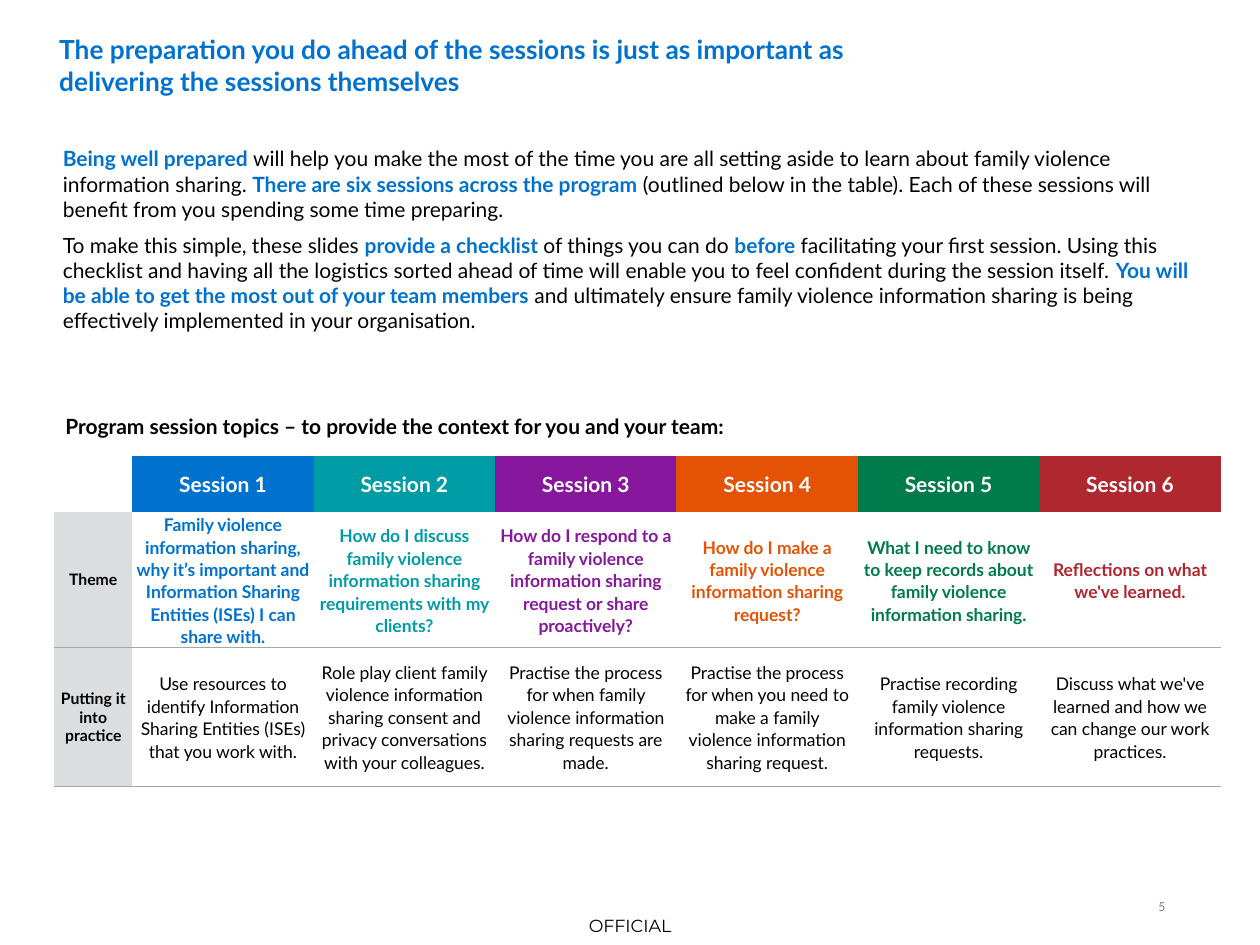
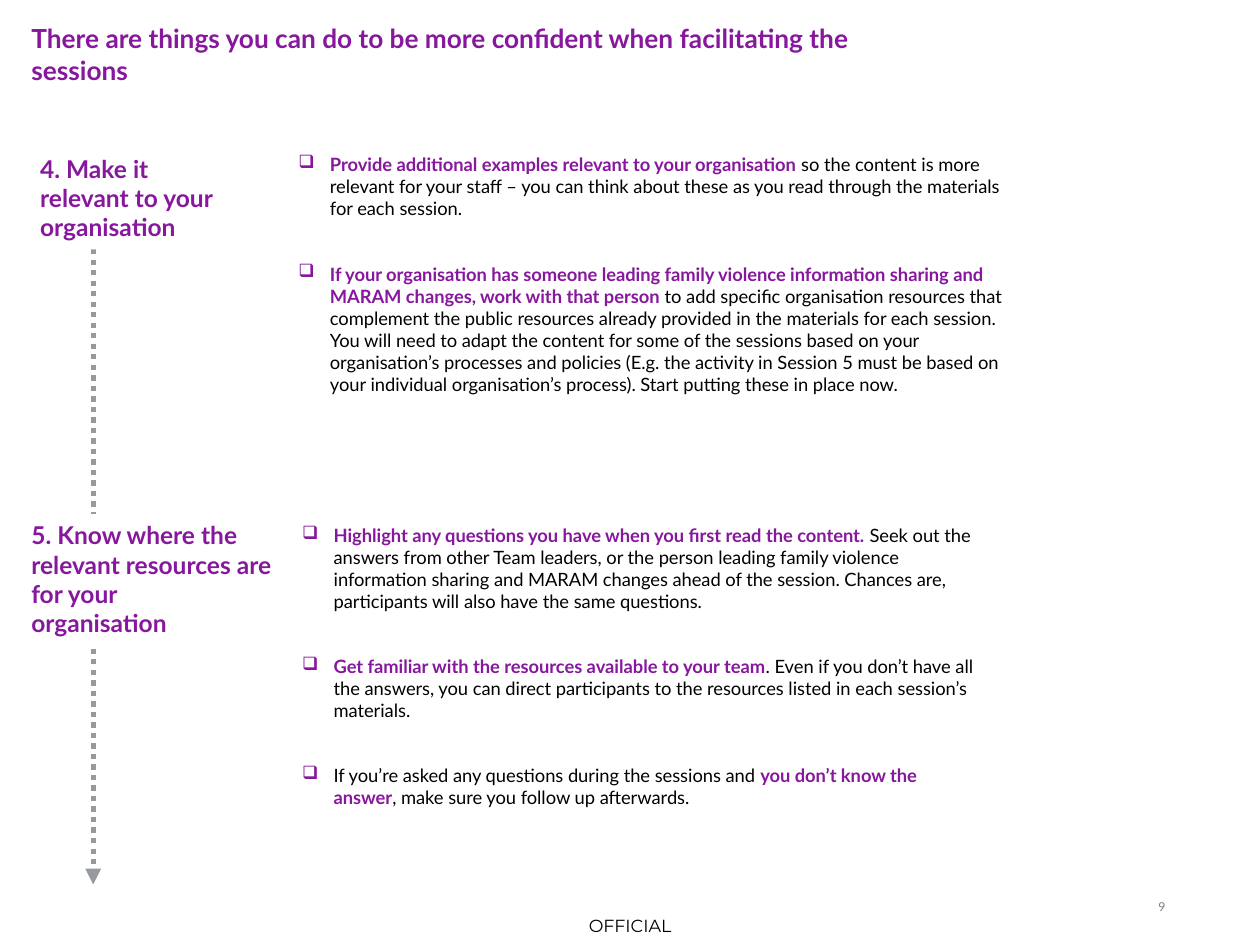
from dataclasses import dataclass

from lxml.etree import SubElement
from pptx import Presentation
from pptx.dml.color import RGBColor
from pptx.enum.dml import MSO_LINE
from pptx.enum.shapes import MSO_CONNECTOR, MSO_SHAPE
from pptx.enum.text import MSO_ANCHOR as Anchor, PP_ALIGN as Align
from pptx.oxml.ns import qn
from pptx.util import Pt

PX = 9144  # 100 px to the inch
NO_GRID_STYLE = "{2D5ABB26-0587-4C30-8999-92F81FD0307C}"


@dataclass(frozen=True)
class Theme:
    font: str = "Lato"
    footer_font: str = "Montserrat"
    black: str = "000000"
    white: str = "FFFFFF"
    blue: str = "0072CE"
    teal: str = "009CA6"
    purple: str = "87189D"
    orange: str = "E35205"
    green: str = "007B4B"
    red: str = "AF272F"
    row_label: str = "DCDDDF"
    rule: str = "A6A6A6"
    arrow: str = "96999E"
    page_number: str = "7F7F7F"
    title_size: float = 15
    step_size: float = 14
    body_size: float = 12
    checklist_size: float = 10.5
    small_size: float = 10
    row_label_size: float = 9
    page_size: float = 7


THEME = Theme()

SESSIONS = [
    (THEME.blue,
     "Family violence information sharing, why it’s important and Information "
     "Sharing Entities (ISEs) I can share with.",
     "Use resources to identify Information Sharing Entities (ISEs) that you work with."),
    (THEME.teal,
     "How do I discuss family violence information sharing requirements with my clients?",
     "Role play client family violence information sharing consent and privacy "
     "conversations with your colleagues."),
    (THEME.purple,
     "How do I respond to a family violence information sharing request or share proactively?",
     "Practise the process for when family violence information sharing requests are made."),
    (THEME.orange,
     "How do I make a family violence information sharing request?",
     "Practise the process for when you need to make a family violence "
     "information sharing request."),
    (THEME.green,
     "What I need to know to keep records about family violence information sharing.",
     "Practise recording family violence information sharing requests."),
    (THEME.red,
     "Reflections on what we've learned.",
     "Discuss what we've learned and how we can change our work practices."),
]

# Asterisks enclose the words set bold in the accent colour.
INTRODUCTION = [
    "*Being well prepared *will help you make the most of the time you are all setting aside "
    "to learn about family violence information sharing. *There are six sessions across the "
    "program* (outlined below in the table). Each of these sessions will benefit from you "
    "spending some time preparing.",
    "To make this simple, these slides *provide a checklist *of things you can do *before "
    "*facilitating your first session. Using this checklist and having all the logistics "
    "sorted ahead of time will enable you to feel confident during the session itself. *You "
    "will be able to get the most out of your team members* and ultimately ensure family "
    "violence information sharing is being effectively implemented in your organisation.",
]
RELEVANCE_CHECKLIST = [
    "*Provide additional examples relevant to your organisation* so the content is more "
    "relevant for your staff – you can think about these as you read through the materials "
    "for each session.",
    "*If your organisation has someone leading family violence information sharing and MARAM "
    "changes, work with that person* to add specific organisation resources that complement "
    "the public resources already provided in the materials for each session. You will need "
    "to adapt the content for some of the sessions based on your organisation’s processes "
    "and policies (E.g. the activity in Session 5 must be based on your individual "
    "organisation’s process). Start putting these in place now.",
]
RESOURCES_CHECKLIST = [
    "*Highlight any questions you have when you first read the content.* Seek out the answers "
    "from other Team leaders, or the person leading family violence information sharing and "
    "MARAM changes ahead of the session. Chances are, participants will also have the same "
    "questions.",
    "*Get familiar with the resources available to your team*. Even if you don’t have all the "
    "answers, you can direct participants to the resources listed in each session’s materials.",
    "If you’re asked any questions during the sessions and *you don’t know the answer*, make "
    "sure you follow up afterwards.",
]


def rgb(value):
    return RGBColor.from_string(value)


def emu(*lengths):
    return [length * PX for length in lengths]


def style(run, size, color, bold=False, font=THEME.font):
    run.font.name = font
    run.font.size = Pt(size)
    run.font.bold = bold
    run.font.color.rgb = rgb(color)


def set_insets(target, left, top, right, bottom):
    """Works for a text frame and for a table cell."""
    (target.margin_left, target.margin_top,
     target.margin_right, target.margin_bottom) = emu(left, top, right, bottom)


def write(frame, lines, size, color, bold=False, align=Align.LEFT, font=THEME.font):
    frame.word_wrap = True
    frame.text = "\n".join(lines)
    for paragraph in frame.paragraphs:
        paragraph.alignment = align
        for run in paragraph.runs:
            style(run, size, color, bold, font)


def add_label(slide, box, text, size, color, anchor=Anchor.TOP, **look):
    """Text box without insets."""
    frame = slide.shapes.add_textbox(*emu(*box)).text_frame
    set_insets(frame, 0, 0, 0, 0)
    frame.vertical_anchor = anchor
    write(frame, [text], size, color, **look)


def add_bullet(paragraph, color):
    props = paragraph._p.get_or_add_pPr()
    props.set("marL", str(25 * PX))
    props.set("indent", str(-25 * PX))
    SubElement(SubElement(props, qn("a:buClr")), qn("a:srgbClr"), val=color)
    SubElement(props, qn("a:buChar"), char="❑")


def add_prose(slide, box, items, size, accent, gap, bulleted=False):
    frame = slide.shapes.add_textbox(*emu(*box)).text_frame
    frame.word_wrap = True
    for index, item in enumerate(items):
        paragraph = frame.paragraphs[0] if index == 0 else frame.add_paragraph()
        if bulleted:
            add_bullet(paragraph, accent)
        paragraph.space_after = Pt(gap)
        for part, words in enumerate(item.split("*")):
            if words:
                run = paragraph.add_run()
                run.text = words
                emphasised = part % 2 == 1
                style(run, size, accent if emphasised else THEME.black, emphasised)


def add_page(deck, title_box, title, color, number):
    """Blank slide with the title, classification and page number all pages share."""
    slide = deck.slides.add_slide(deck.slide_layouts[6])
    add_label(slide, (449, 719, 102, 31), "OFFICIAL", THEME.small_size, THEME.black,
              Anchor.MIDDLE, align=Align.CENTER, font=THEME.footer_font)
    add_label(slide, title_box, title, THEME.title_size, color, Anchor.MIDDLE, bold=True)
    add_label(slide, (891, 714, 34, 20), str(number), THEME.page_size,
              THEME.page_number, align=Align.RIGHT)
    return slide


def rule_cell(cell, edges):
    props = cell._tc.get_or_add_tcPr()
    for edge in edges:
        line = SubElement(props, qn(edge), w=str(Pt(1)))
        SubElement(SubElement(line, qn("a:solidFill")), qn("a:srgbClr"), val=THEME.rule)


def fill_cell(cell, text, size, color, bold, insets, fill=None, edges=(), spacing=1.0):
    rule_cell(cell, edges)
    if fill:
        cell.fill.solid()
        cell.fill.fore_color.rgb = rgb(fill)
    else:
        cell.fill.background()
    set_insets(cell, *insets)
    cell.vertical_anchor = Anchor.MIDDLE
    write(cell.text_frame, [text], size, color, bold, Align.CENTER)
    cell.text_frame.paragraphs[0].line_spacing = spacing


def add_session_table(slide, left, top):
    label_width, session_width = 62, 144
    heights = (44, 107, 110)
    width = label_width + session_width * len(SESSIONS)
    holder = slide.shapes.add_table(len(heights), len(SESSIONS) + 1,
                                    *emu(left, top, width, sum(heights)))
    holder._element.find(".//" + qn("a:tableStyleId")).text = NO_GRID_STYLE
    table = holder.table
    table.first_row = table.horz_banding = False
    for index, column in enumerate(table.columns):
        column.width = (session_width if index else label_width) * PX
    for row, height in zip(table.rows, heights):
        row.height = height * PX

    theme_edges, practice_edges = ("a:lnB",), ("a:lnT", "a:lnB")
    table.cell(0, 0).fill.background()
    for row, label, edges in ((1, "Theme", theme_edges),
                              (2, "Putting it into practice", practice_edges)):
        fill_cell(table.cell(row, 0), label, THEME.row_label_size, THEME.black, True,
                  (4, 0, 4, 0), THEME.row_label, edges)
    for number, (color, topic, practice) in enumerate(SESSIONS, 1):
        fill_cell(table.cell(0, number), f"Session {number}", THEME.body_size,
                  THEME.white, True, (8, 0, 8, 0), color)
        fill_cell(table.cell(1, number), topic, THEME.small_size, color, True,
                  (1, 1, 1, 0), edges=theme_edges, spacing=1.07)
        fill_cell(table.cell(2, number), practice, THEME.small_size, THEME.black, False,
                  (4, 4, 4, 4), edges=practice_edges, spacing=1.07)


def add_timeline(slide, x, top, bottom):
    arrow = slide.shapes.add_connector(MSO_CONNECTOR.STRAIGHT, *emu(x, top, x, bottom))
    arrow.line.color.rgb = rgb(THEME.arrow)
    arrow.line.width = Pt(3)
    arrow.line.dash_style = MSO_LINE.ROUND_DOT
    SubElement(arrow.line._get_or_add_ln(), qn("a:tailEnd"), type="triangle")
    SubElement(arrow._element.spPr, qn("a:effectLst"))


def add_step(slide, box, lines):
    """Step heading on white, which interrupts the timeline behind it."""
    step = slide.shapes.add_shape(MSO_SHAPE.RECTANGLE, *emu(*box))
    step.shadow.inherit = False
    step.fill.solid()
    step.fill.fore_color.rgb = rgb(THEME.white)
    step.line.fill.background()
    step.text_frame.vertical_anchor = Anchor.TOP
    write(step.text_frame, lines, THEME.step_size, THEME.purple, bold=True)


def build_preparation(deck):
    slide = add_page(
        deck, (47, 19, 712, 65),
        "The preparation you do ahead of the sessions is just as important as "
        "delivering the sessions themselves", THEME.blue, 5)
    add_prose(slide, (40, 111, 918, 160), INTRODUCTION, THEME.body_size, THEME.blue, gap=6)
    add_session_table(slide, 43, 362)
    add_prose(slide, (42, 323, 717, 30),
              ["*Program session topics – to provide the context for you and your team:*"],
              THEME.body_size, THEME.black, gap=0)


def build_confidence(deck):
    slide = add_page(
        deck, (25, 10, 716, 66),
        "There are things you can do to be more confident when facilitating the sessions",
        THEME.purple, 9)
    add_timeline(slide, 74, 181, 702)
    add_step(slide, (22, 117, 169, 81), ["4. Make it relevant to your organisation"])
    add_step(slide, (15, 408, 212, 104),
             ["5. Know where the relevant resources are for your", "organisation"])
    for box, checklist in (((227, 117, 581, 204), RELEVANCE_CHECKLIST),
                           ((230, 411, 557, 238), RESOURCES_CHECKLIST)):
        add_prose(slide, box, checklist, THEME.checklist_size, THEME.purple,
                  gap=24.6, bulleted=True)


def main():
    deck = Presentation()
    deck.slide_width, deck.slide_height = emu(1000, 750)
    build_preparation(deck)
    build_confidence(deck)
    deck.save("out.pptx")


if __name__ == "__main__":
    main()
